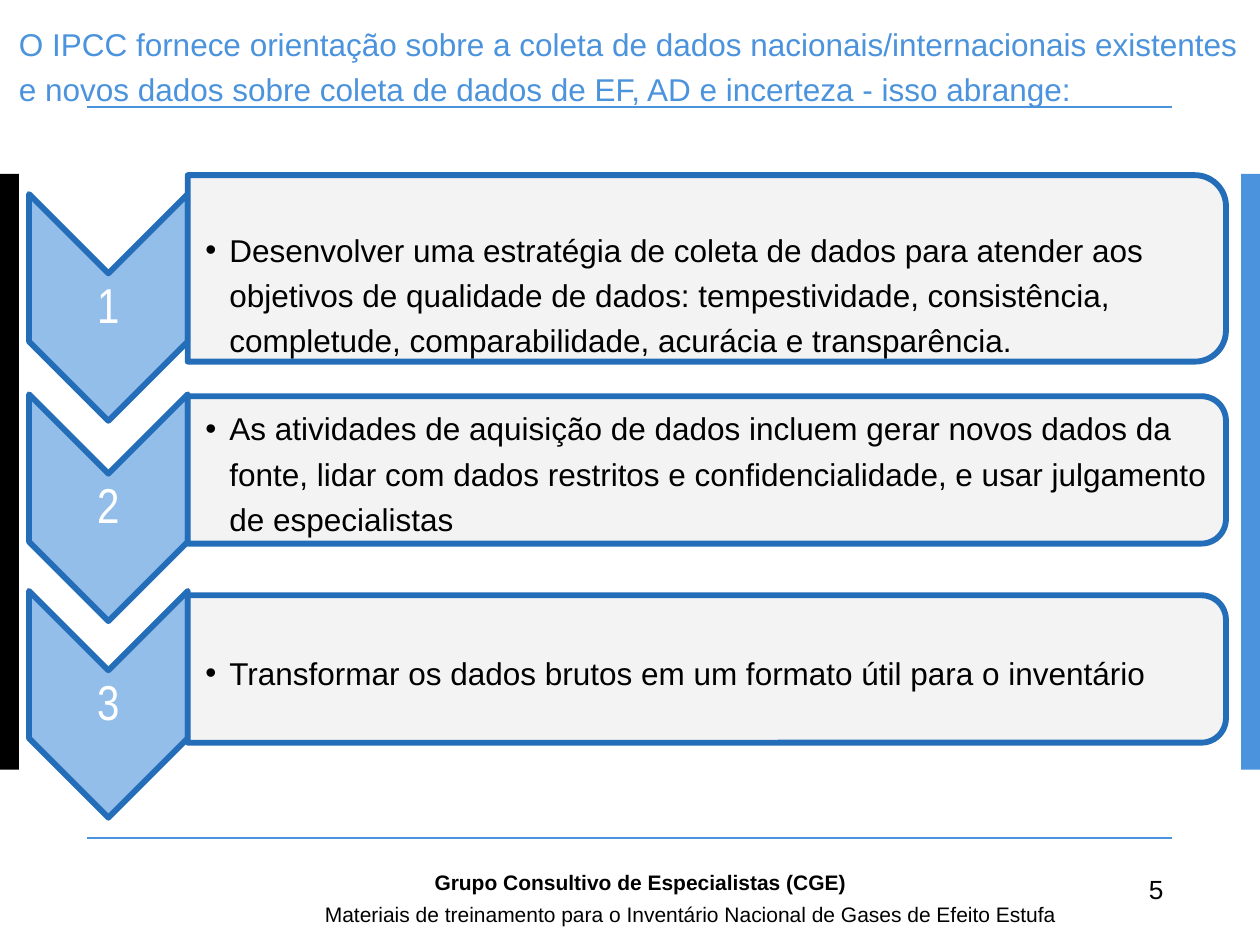
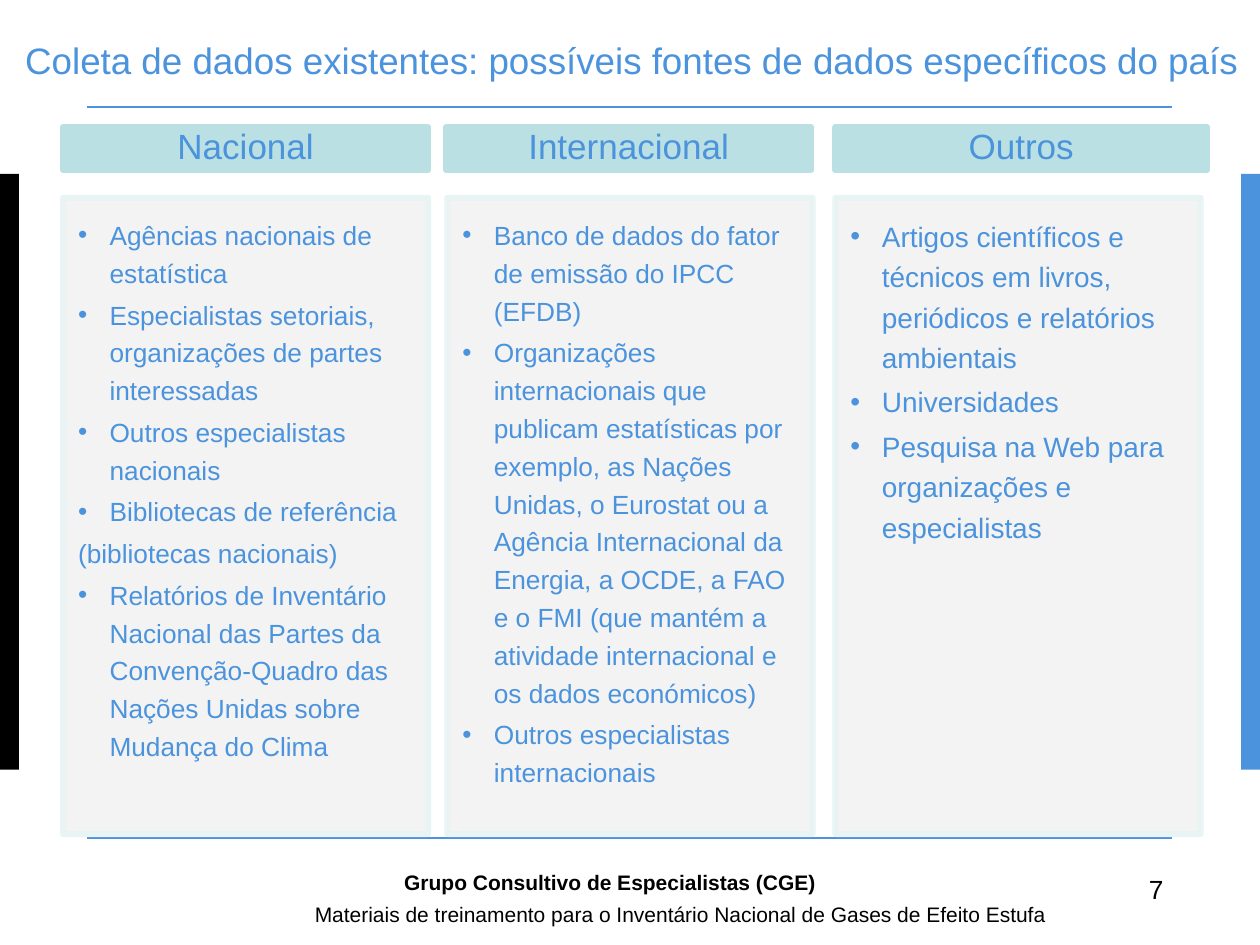
from pptx import Presentation
from pptx.dml.color import RGBColor
from pptx.enum.shapes import MSO_CONNECTOR, MSO_SHAPE
from pptx.enum.text import MSO_ANCHOR, PP_ALIGN
from pptx.oxml.ns import qn
from pptx.util import Inches, Pt
from lxml import etree

RECTANGLE = MSO_SHAPE.RECTANGLE
CHEVRON = MSO_SHAPE.CHEVRON
ROUNDED_SIDE = MSO_SHAPE.ROUND_2_SAME_RECTANGLE
STRAIGHT = MSO_CONNECTOR.STRAIGHT
TOP, MIDDLE = MSO_ANCHOR.TOP, MSO_ANCHOR.MIDDLE
LEFT, CENTER = PP_ALIGN.LEFT, PP_ALIGN.CENTER

BLACK = RGBColor(0x00, 0x00, 0x00)
WHITE = RGBColor(0xFF, 0xFF, 0xFF)
BLUE = RGBColor(0x4B, 0x93, 0xDC)
LIGHT_BLUE = RGBColor(0x93, 0xBE, 0xEA)
DARK_BLUE = RGBColor(0x24, 0x6E, 0xB9)
TEAL = RGBColor(0xBB, 0xE0, 0xE3)
PALE_TEAL = RGBColor(0xE7, 0xF3, 0xF4)
GREY = RGBColor(0xF2, 0xF2, 0xF2)

OUTLINE = 3.35
TEXT_MARGINS = (0.1, 0.05, 0.1, 0.05)
NO_MARGINS = (0, 0, 0, 0)
STEP_MARGINS = (0.14, 0.01, 0.01, 0.01)
HEADER_MARGINS = (0.16, 0.09, 0.16, 0.09)
LIST_MARGINS = (0.12, 0.12, 0.16, 0.17)

FOOTER_GROUP = "Grupo Consultivo de Especialistas (CGE)"
FOOTER_MATERIAL = ("Materiais de treinamento para o Inventário Nacional "
                   "de Gases de Efeito Estufa")

STEPS_TITLE = ("O IPCC fornece orientação sobre a coleta de dados nacionais/internacionais "
               "existentes e novos dados sobre coleta de dados de EF, AD e incerteza - "
               "isso abrange:")
# Chevron centre, panel centre, panel height, downward shift of the text, text
STEPS = [
    (2.44, 2.13, 1.48, 0.18,
     "Desenvolver uma estratégia de coleta de dados para atender aos objetivos de "
     "qualidade de dados: tempestividade, consistência, completude, comparabilidade, "
     "acurácia e transparência."),
    (4.03, 3.73, 1.17, 0,
     "As atividades de aquisição de dados incluem gerar novos dados da fonte, lidar com "
     "dados restritos e confidencialidade, e usar julgamento de especialistas"),
    (5.59, 5.31, 1.17, 0,
     "Transformar os dados brutos em um formato útil para o inventário"),
]

SOURCES_TITLE = "Coleta de dados existentes: possíveis fontes de dados específicos do país"
UNBULLETED = "(bibliotecas nacionais)"
# Header, header left, header width, list left, text size, items
SOURCES = [
    ("Nacional", 0.5, 2.9, 0.5, 15, [
        "Agências nacionais de estatística",
        "Especialistas setoriais, organizações de partes interessadas",
        "Outros especialistas nacionais",
        "Bibliotecas de referência",
        UNBULLETED,
        "Relatórios de Inventário Nacional das Partes da Convenção-Quadro das Nações "
        "Unidas sobre Mudança do Clima",
    ]),
    ("Internacional", 3.54, 2.9, 3.55, 15, [
        "Banco de dados do fator de emissão do IPCC (EFDB)",
        "Organizações internacionais que publicam estatísticas por exemplo, as Nações "
        "Unidas, o Eurostat ou a Agência Internacional da Energia, a OCDE, a FAO e o FMI "
        "(que mantém a atividade internacional e os dados económicos)",
        "Outros especialistas internacionais",
    ]),
    ("Outros", 6.63, 2.95, 6.63, 16, [
        "Artigos científicos e técnicos em livros, periódicos e relatórios ambientais",
        "Universidades",
        "Pesquisa na Web para organizações e especialistas",
    ]),
]


def set_opacity(color_format_owner, percent):
    for color in color_format_owner.iter(qn("a:srgbClr")):
        etree.SubElement(color, qn("a:alpha"), val=str(percent * 1000))


def add_box(page, kind, left, top, width, height, fill, line=None, rotation=0):
    box = page.shapes.add_shape(kind, Inches(left), Inches(top), Inches(width), Inches(height))
    box.shadow.inherit = False
    box.rotation = rotation
    box.fill.solid()
    box.fill.fore_color.rgb = fill
    if line is None:
        box.line.fill.background()
    else:
        box.line.color.rgb = line
        box.line.width = Pt(OUTLINE)
    return box


def add_turned_box(page, kind, center_x, center_y, width, height, fill):
    """Place a shape by its centre and turn it a quarter clockwise."""
    return add_box(page, kind, center_x - width / 2, center_y - height / 2,
                   width, height, fill, DARK_BLUE, 90)


def add_bullet(paragraph, indent):
    properties = paragraph._p.get_or_add_pPr()
    properties.set("marL", str(Inches(indent)))
    properties.set("indent", str(-Inches(indent)))
    font = etree.SubElement(properties, qn("a:buFont"))
    font.set("typeface", "Arial")
    etree.SubElement(properties, qn("a:buChar"), char="•")


def write(box, texts, size, color, margins=TEXT_MARGINS, anchor=TOP, bullet_indent=0,
          font="Arial", bold=False, **paragraph_format):
    """Fill a box with paragraphs that share one format."""
    frame = box.text_frame
    frame.word_wrap = True
    frame.vertical_anchor = anchor
    sides = ("margin_left", "margin_top", "margin_right", "margin_bottom")
    for side, margin in zip(sides, margins):
        setattr(frame, side, Inches(margin))
    formats = {"alignment": LEFT, **paragraph_format}
    for index, text in enumerate(texts):
        para = frame.paragraphs[0] if index == 0 else frame.add_paragraph()
        for name, value in formats.items():
            setattr(para, name, value)
        if bullet_indent and text != UNBULLETED:
            add_bullet(para, bullet_indent)
        span = para.add_run()
        span.text = text
        for name, value in {"name": font, "size": Pt(size), "bold": bold}.items():
            setattr(span.font, name, value)
        span.font.color.rgb = color


def add_text(page, left, top, width, height, text, size, color, **text_format):
    box = page.shapes.add_textbox(Inches(left), Inches(top), Inches(width), Inches(height))
    write(box, [text], size, color, **text_format)


def add_rule(page, top):
    rule = page.shapes.add_connector(STRAIGHT, Inches(0.69), Inches(top),
                                     Inches(9.3), Inches(top))
    rule.line.color.rgb = BLUE
    rule.line.width = Pt(1)
    etree.SubElement(rule._element.spPr, qn("a:effectLst"))


def add_page(deck):
    """Add a blank slide with the side bands and the two rules."""
    page = deck.slides.add_slide(deck.slide_layouts[6])
    for left, color in ((0, BLACK), (9.85, BLUE)):
        add_box(page, RECTANGLE, left, 1.38, 0.15, 4.73, color)
    for top in (0.85, 6.65):
        add_rule(page, top)
    return page


def add_title(page, left, top, height, text, size, line_spacing):
    add_text(page, left, top, 10 - left, height, text, size, BLUE,
             margins=NO_MARGINS, anchor=MIDDLE, line_spacing=line_spacing)


def add_footer(page, number, material_left, group_left):
    add_text(page, 9.02, 6.88, 0.31, 0.35, number, 15, BLACK)
    add_text(page, material_left, 7.11, 8.6 - material_left, 0.2, FOOTER_MATERIAL, 12, BLACK)
    add_text(page, group_left, 6.85, 6.97 - group_left, 0.25, FOOTER_GROUP, 12, BLACK, bold=True)


def add_step(page, number, chevron_y, panel_y, panel_height, text_shift, text):
    add_turned_box(page, CHEVRON, 0.86, chevron_y, 1.8, 1.26, LIGHT_BLUE)
    add_text(page, 0.23, chevron_y - 0.27, 1.26, 0.54, str(number), 28, WHITE,
             margins=(0.02,) * 4, anchor=MIDDLE, font="Arial Narrow",
             alignment=CENTER, line_spacing=0.9)
    panel = add_turned_box(page, ROUNDED_SIDE, 5.61, panel_y, panel_height, 8.24, GREY)
    set_opacity(panel._element.spPr.find(qn("a:solidFill")), 90)
    text_height = panel_height - 0.14
    add_text(page, 1.49, panel_y - text_height / 2 + text_shift, 8.17, text_height, text,
             18, BLACK, margins=STEP_MARGINS, anchor=MIDDLE, bullet_indent=0.19,
             line_spacing=1.2)


def add_source_column(page, header, header_left, header_width, list_left, size, items):
    head = add_box(page, RECTANGLE, header_left, 1.01, header_width, 0.34, TEAL, TEAL)
    write(head, [header], 20, BLUE, margins=HEADER_MARGINS, anchor=MIDDLE,
          alignment=CENTER, line_spacing=0.9)
    body = add_box(page, RECTANGLE, list_left, 1.57, 2.9, 5.05, GREY, PALE_TEAL)
    set_opacity(body._element.spPr, 90)
    write(body, items, size, BLUE, margins=LIST_MARGINS, bullet_indent=0.25,
          line_spacing=1.2, space_after=Pt(0.15 * size))


def main():
    deck = Presentation()
    deck.slide_width, deck.slide_height = Inches(10), Inches(7.5)

    page = add_page(deck)
    add_title(page, 0.15, -0.08, 1.15, STEPS_TITLE, 18, 1.2)
    for number, step in enumerate(STEPS, start=1):
        add_step(page, number, *step)
    add_footer(page, "5", 2.48, 3.35)

    page = add_page(deck)
    add_title(page, 0.2, 0, 1.09, SOURCES_TITLE, 21, Pt(15))
    for column in SOURCES:
        add_source_column(page, *column)
    add_footer(page, "7", 2.4, 3.11)

    deck.save("out.pptx")


if __name__ == "__main__":
    main()
